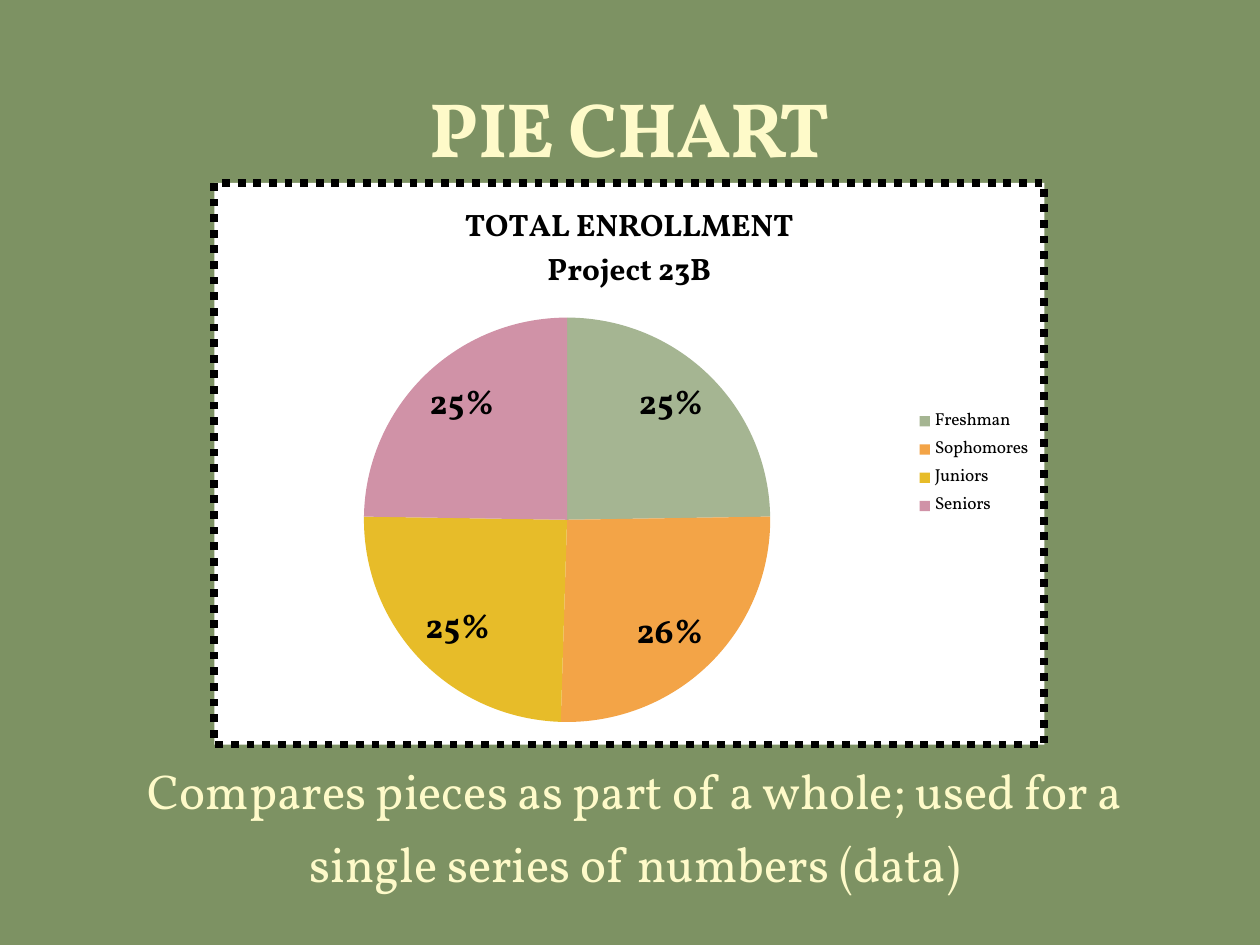
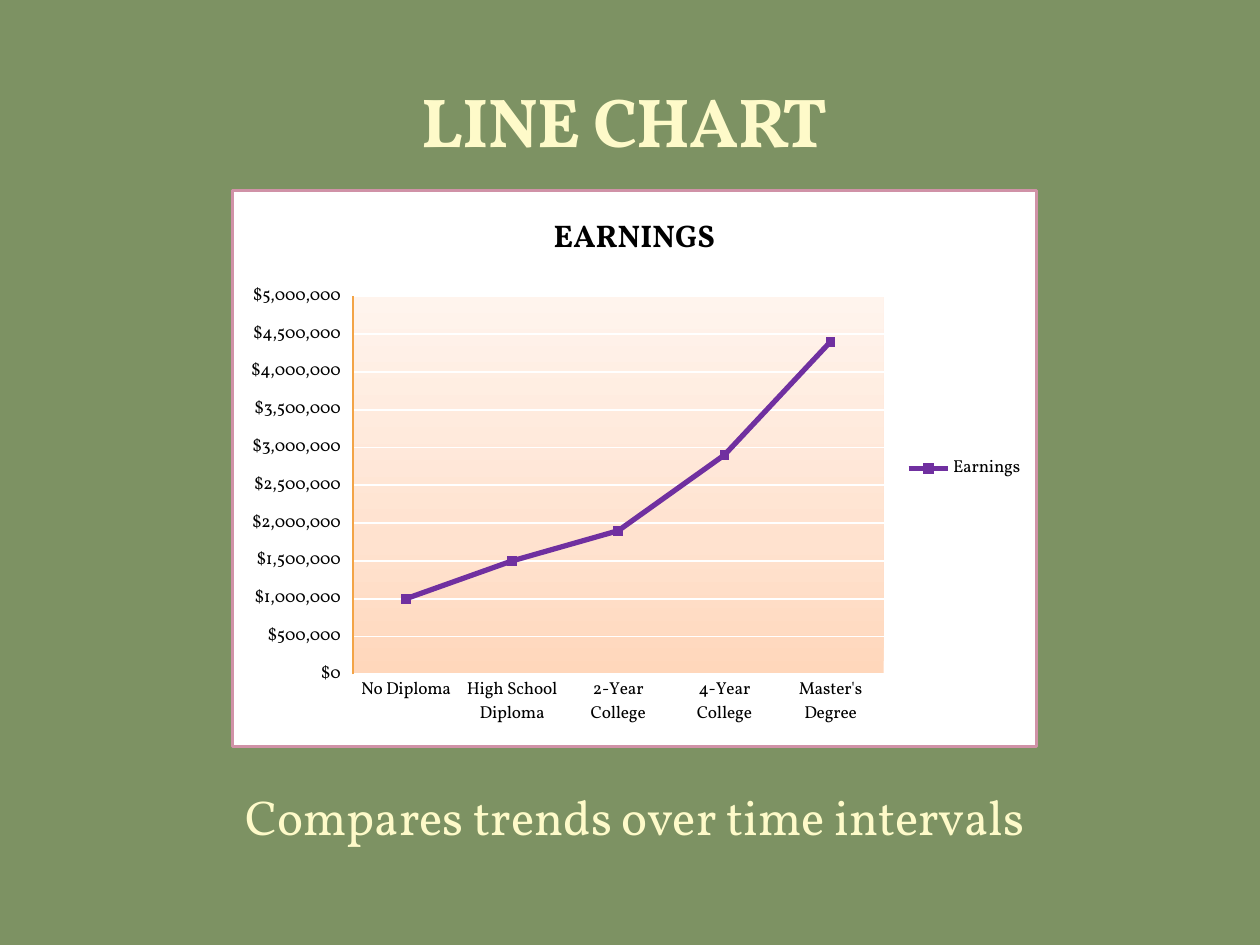
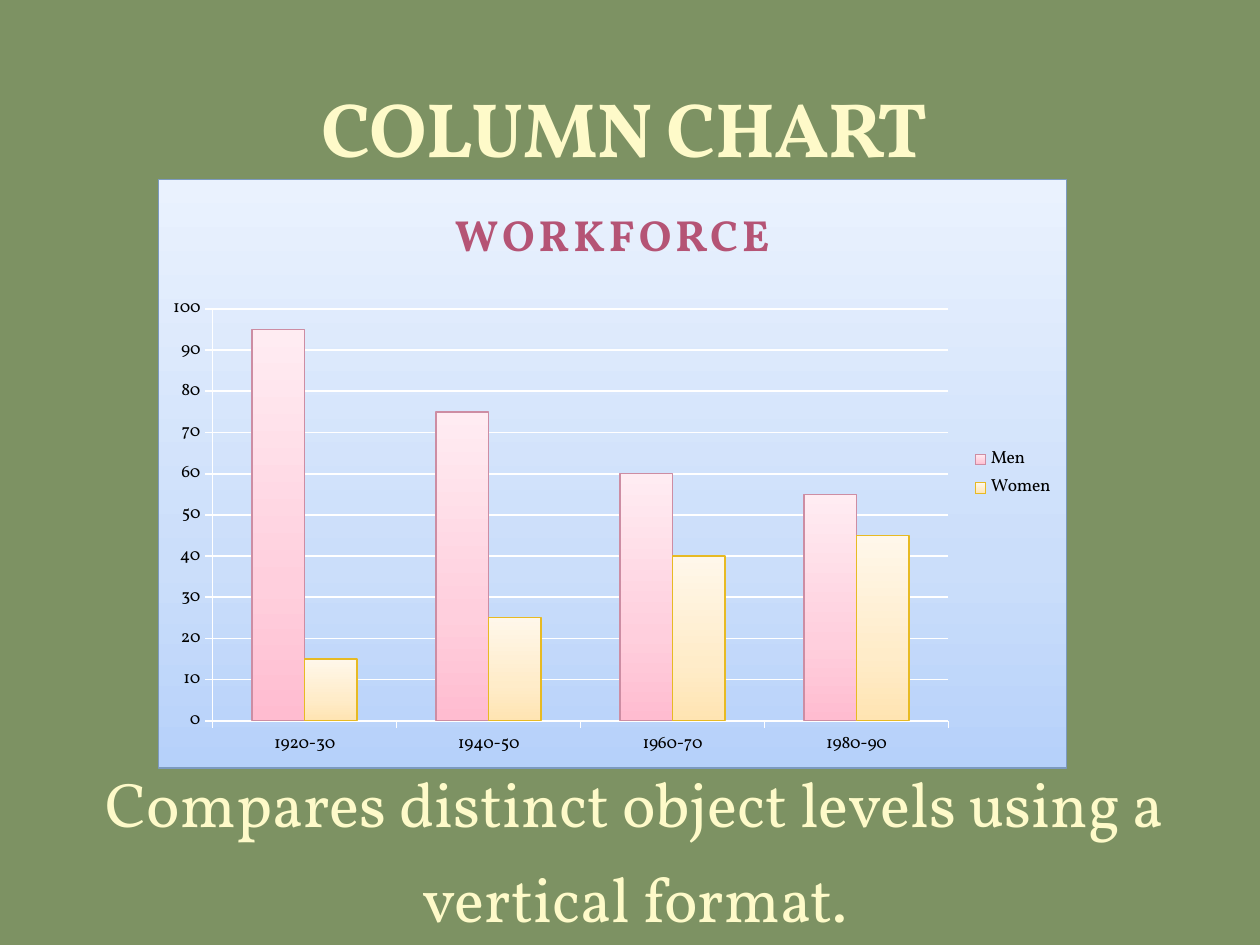
from dataclasses import dataclass

import pptx
import pptx.chart.data
import pptx.dml.color
import pptx.enum.chart
import pptx.enum.text
import pptx.oxml
import pptx.oxml.ns
import pptx.util

XL = pptx.enum.chart.XL_CHART_TYPE
TICK = pptx.enum.chart.XL_TICK_MARK
Inches, Pt = pptx.util.Inches, pptx.util.Pt
qn = pptx.oxml.ns.qn


@dataclass(frozen=True)
class Theme:
    font: str = "Vollkorn"
    green: str = "7D9263"
    cream: str = "FEFAC9"
    black: str = "000000"
    white: str = "FFFFFF"
    orange: str = "F3A447"
    purple: str = "7030A0"
    rose: str = "D092A7"
    chart_size: float = 10
    chart_title_size: float = 18
    label_size: float = 20


T = Theme()
GRADIENT_STOPS = (0, 35, 100)

SLIDES = [
    dict(
        title="PIE CHART", title_box=(0.5, 0.5, 9, 0.92), title_size=44,
        caption="Compares pieces as part of a whole; used for a single series of numbers (data)",
        caption_box=(0.58, 5.87, 8.92, 1.63), caption_size=28,
        kind=XL.PIE, chart_box=(1.67, 1.42, 6.65, 4.52), plot=(0.18, 0.24, 0.49, 0.72),
        heading="TOTAL ENROLLMENT\nProject 23B",
        fill=T.white, border=(T.black, 4.5, "sysDot"),
        categories=["Freshman", "Sophomores", "Juniors", "Seniors"],
        series={"Series 1": (25, 26, 25, 25)},
        slices=["A5B592", T.orange, "E7BC29", T.rose],
    ),
    dict(
        title="LINE CHART", title_box=(0.42, 0.5, 9.08, 0.83), title_size=39.6,
        caption="Compares trends over time intervals",
        caption_box=(0.58, 6.08, 8.92, 0.88), caption_size=28,
        kind=XL.LINE_MARKERS, chart_box=(1.83, 1.5, 6.41, 4.44), plot=(0.15, 0.19, 0.66, 0.68),
        heading="EARNINGS",
        fill=T.white, border=(T.rose, 2, "solid"),
        plot_fill=("FFD7BB", "FFE2CF", "FFF4ED"),
        categories=["No Diploma", "High School Diploma", "2-Year College",
                    "4-Year College", "Master's Degree"],
        series={"Earnings": (1000000, 1500000, 1900000, 2900000, 4400000)},
        scale=(5000000, 500000), number_format='"$"#,##0',
    ),
    dict(
        title="COLUMN CHART", title_box=(0.42, 0.5, 9.08, 0.92), title_size=44,
        caption="Compares distinct object levels using a vertical format.",
        caption_box=(0.58, 5.87, 8.92, 0.88), caption_size=36,
        kind=XL.COLUMN_CLUSTERED, chart_box=(1.25, 1.42, 7.22, 4.68),
        plot=(0.06, 0.22, 0.81, 0.7),
        heading="WORKFORCE", heading_style=(25, "B55475", 250),
        fill=("B6D1FA", "CBDEFA", "EAF2FE"), border=("7C9ABF", 0.75, "solid"),
        categories=["1920-30", "1940-50", "1960-70", "1980-90"],
        series={"Men": (95, 75, 60, 55), "Women": (15, 25, 40, 45)},
        bars=[(("FFBCD0", "FFCFDD", "FFECF2"), "CD8DA3"),
              (("FFE4B2", "FFECC9", "FFF7EA"), "E7BA23")],
        scale=(100, 10), number_format="General",
    ),
]


def rgb(color):
    return pptx.dml.color.RGBColor.from_string(color)


def xml(tag, body):
    return pptx.oxml.parse_xml(f"<{tag} {pptx.oxml.ns.nsdecls('a', 'c')}>{body}</{tag}>")


def fill_xml(fill):
    if isinstance(fill, str):
        return f'<a:solidFill><a:srgbClr val="{fill}"/></a:solidFill>'
    stops = "".join(f'<a:gs pos="{pos * 1000}"><a:srgbClr val="{color}"/></a:gs>'
                    for pos, color in zip(GRADIENT_STOPS, fill))
    return f'<a:gradFill><a:gsLst>{stops}</a:gsLst><a:lin ang="16200000" scaled="1"/></a:gradFill>'


def area_xml(fill, border=None):
    line = "<a:ln><a:noFill/></a:ln>"
    if border:
        color, width, dash = border
        line = (f'<a:ln w="{int(width * 12700)}">{fill_xml(color)}'
                f'<a:prstDash val="{dash}"/></a:ln>')
    return xml("c:spPr", fill_xml(fill) + line)


def style_font(font, size, color, bold=False):
    font.name, font.size, font.bold = T.font, Pt(size), bold
    font.color.rgb = rgb(color)


def style_line(line, color, width):
    line.color.rgb = rgb(color)
    line.width = Pt(width)


def place(sp, box):
    sp.left, sp.top, sp.width, sp.height = map(Inches, box)


def add_title(s, d):
    sp = s.shapes.title
    place(sp, d["title_box"])
    tf = sp.text_frame
    tf.text = d["title"]
    tf.auto_size = pptx.enum.text.MSO_AUTO_SIZE.NONE
    tf.vertical_anchor = pptx.enum.text.MSO_ANCHOR.BOTTOM
    tf.margin_left = tf.margin_right = tf.margin_top = Inches(0.1)
    tf.margin_bottom = Inches(0.05)
    p = tf.paragraphs[0]
    p.alignment = pptx.enum.text.PP_ALIGN.CENTER
    r = p.runs[0]
    style_font(r.font, d["title_size"], T.cream, True)
    r.font._element.set("spc", "-50")


def add_caption(s, d):
    tf = s.shapes.add_textbox(*map(Inches, d["caption_box"])).text_frame
    tf.word_wrap = True
    tf.text = d["caption"]
    p = tf.paragraphs[0]
    p.alignment = pptx.enum.text.PP_ALIGN.CENTER
    p.line_spacing, p.space_before, p.space_after = 1.25, Pt(6), Pt(10)
    style_font(p.runs[0].font, d["caption_size"], T.cream)


def set_plot_layout(plot_area, shares):
    for old in plot_area.findall(qn("c:layout")):
        plot_area.remove(old)
    body = '<c:layoutTarget val="inner"/><c:xMode val="edge"/><c:yMode val="edge"/>'
    body += "".join(f'<c:{n} val="{v}"/>' for n, v in zip("xywh", shares))
    plot_area.insert(0, xml("c:layout", f"<c:manualLayout>{body}</c:manualLayout>"))


def add_heading(chart, d):
    size, color, spacing = d.get("heading_style", (T.chart_title_size, T.black, 0))
    tf = chart.chart_title.text_frame
    tf.text = d["heading"]
    chart.chart_title.include_in_layout = False
    for p in tf.paragraphs:
        for r in p.runs:
            style_font(r.font, size, color, True)
            r.font._element.set("spc", str(spacing))


def style_axes(chart, d):
    value, category = chart.value_axis, chart.category_axis
    value.minimum_scale = 0
    value.maximum_scale, value.major_unit = d["scale"]
    value.tick_labels.number_format = d["number_format"]
    value.tick_labels.number_format_is_linked = False
    value.has_major_gridlines = True
    style_line(value.major_gridlines.format.line, T.white, 1)
    for axis in (value, category):
        axis.major_tick_mark = TICK.OUTSIDE
        style_line(axis.format.line, T.white, 1)


def style_pie(chart, d):
    plot = chart.plots[0]
    for i, color in enumerate(d["slices"]):
        fill = plot.series[0].points[i].format.fill
        fill.solid()
        fill.fore_color.rgb = rgb(color)
    plot.has_data_labels = True
    labels = plot.data_labels
    labels.show_percentage, labels.show_value = True, False
    labels.number_format, labels.number_format_is_linked = "0%", False
    labels.position = pptx.enum.chart.XL_LABEL_POSITION.INSIDE_END
    style_font(labels.font, T.label_size, T.black, True)


def style_lines(chart, d):
    style_axes(chart, d)
    chart.category_axis.crosses = pptx.enum.chart.XL_AXIS_CROSSES.MAXIMUM
    chart.value_axis.tick_label_position = pptx.enum.chart.XL_TICK_LABEL_POSITION.LOW
    style_line(chart.value_axis.format.line, T.orange, 1)
    for axis in (chart.value_axis, chart.category_axis):
        axis.major_tick_mark = TICK.NONE
    for series in chart.plots[0].series:
        series.smooth = False
        style_line(series.format.line, T.purple, 3)
        marker = series.marker
        marker.style, marker.size = pptx.enum.chart.XL_MARKER_STYLE.SQUARE, 5
        marker.format.fill.solid()
        marker.format.fill.fore_color.rgb = rgb(T.purple)
        style_line(marker.format.line, T.purple, 0.75)


def style_columns(chart, d):
    style_axes(chart, d)
    plot = chart.plots[0]
    plot.vary_by_categories = False
    plot.gap_width, plot.overlap = 150, 0
    for series, (fill, outline) in zip(plot.series, d["bars"]):
        style_line(series.format.line, outline, 0.75)
        series._element.get_or_add_spPr().insert(0, area_xml(fill)[0])


STYLERS = {XL.PIE: style_pie, XL.LINE_MARKERS: style_lines,
           XL.COLUMN_CLUSTERED: style_columns}


def add_chart(s, d):
    data = pptx.chart.data.CategoryChartData()
    data.categories = d["categories"]
    for name, values in d["series"].items():
        data.add_series(name, values)
    chart = s.shapes.add_chart(d["kind"], *map(Inches, d["chart_box"]), data).chart
    style_font(chart.font, T.chart_size, T.black)
    add_heading(chart, d)
    chart.has_legend = True
    chart.legend.position = pptx.enum.chart.XL_LEGEND_POSITION.RIGHT
    chart.legend.include_in_layout = False
    STYLERS[d["kind"]](chart, d)
    root = chart._chartSpace.find(qn("c:chart"))
    root.addnext(area_xml(d["fill"], d["border"]))
    plot_area = root.find(qn("c:plotArea"))
    set_plot_layout(plot_area, d["plot"])
    if "plot_fill" in d:
        plot_area.append(area_xml(d["plot_fill"]))


def main():
    prs = pptx.Presentation()
    prs.slide_width, prs.slide_height = Inches(10), Inches(7.5)
    background = prs.slide_master.background.fill
    background.solid()
    background.fore_color.rgb = rgb(T.green)
    for d in SLIDES:
        s = prs.slides.add_slide(prs.slide_layouts[5])
        add_title(s, d)
        add_caption(s, d)
        add_chart(s, d)
    prs.save("out.pptx")


if __name__ == "__main__":
    main()
